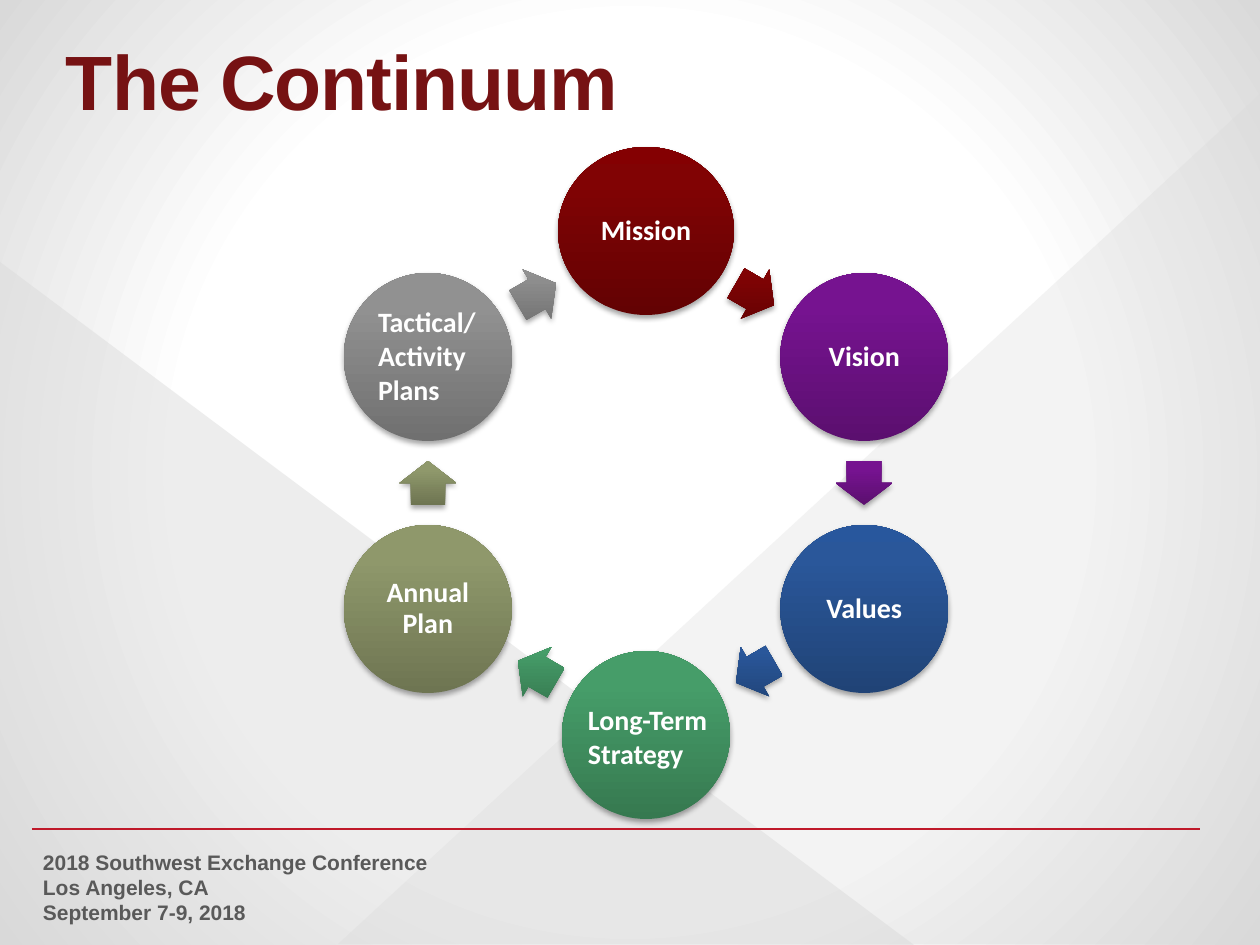
import math
from dataclasses import dataclass

import pptx
import pptx.dml.color
import pptx.enum.shapes
import pptx.enum.text
import pptx.oxml
import pptx.oxml.ns
import pptx.util
from lxml import etree

SHAPE = pptx.enum.shapes.MSO_SHAPE
ALIGN = pptx.enum.text.PP_ALIGN
ANCHOR = pptx.enum.text.MSO_ANCHOR
qn = pptx.oxml.ns.qn


@dataclass(frozen=True)
class Theme:
    heading_font: str = "Arial"
    label_font: str = "Calibri"
    title_size: int = 44
    label_size: int = 16
    footer_size: int = 12
    title: str = "761213"
    footer: str = "595959"
    rule: str = "BF192A"
    facet: str = "D9D9D9"
    label: str = "FFFFFF"
    background: tuple = ((0, "FFFFFF"), (57, "FFFFFF"), (100, "D9D9D9"))
    # Dark, middle and light tone of each stage
    mission: tuple = ("630203", "810304", "840002")
    vision: tuple = ("5B0F6F", "761390", "781193")
    values: tuple = ("204376", "2A579A", "28579D")
    strategy: tuple = ("367950", "469D69", "459F69")
    annual: tuple = ("6E7552", "8F986B", "909A6B")
    tactical: tuple = ("707070", "919191", "929292")


def px(length):
    return pptx.util.Emu(round(length * 914400 / 126))


def rgb(value):
    return pptx.dml.color.RGBColor.from_string(value)


def write_text(frame, text, *, font, size, color, align=ALIGN.LEFT, anchor=ANCHOR.TOP,
               line_spacing=1.0, tracking=None, insets=(0, 0, 0, 0)):
    """Fill a text frame with one bold paragraph per line of text."""
    frame.word_wrap = True
    frame.auto_size = pptx.enum.text.MSO_AUTO_SIZE.NONE
    frame.vertical_anchor = anchor
    (frame.margin_left, frame.margin_top,
     frame.margin_right, frame.margin_bottom) = map(px, insets)
    for index, line in enumerate(text.split("\n")):
        paragraph = frame.paragraphs[0] if index == 0 else frame.add_paragraph()
        paragraph.alignment = align
        paragraph.line_spacing = line_spacing
        run = paragraph.add_run()
        run.text = line
        run.font.name = font
        run.font.size = pptx.util.Pt(size)
        run.font.bold = True
        run.font.color.rgb = rgb(color)
        if tracking is not None:
            run.font._element.set("spc", str(round(tracking * 100)))


def apply_gradient(element, stops, direction):
    """Replace the first solid fill in an element by a gradient."""
    solid = next(element.iter(qn("a:solidFill")))
    stop_xml = "".join(
        f'<a:gs pos="{position * 1000}"><a:srgbClr val="{color}"/></a:gs>'
        for position, color in stops)
    gradient = pptx.oxml.parse_xml(
        f'<a:gradFill {pptx.oxml.ns.nsdecls("a")} rotWithShape="0">'
        f"<a:gsLst>{stop_xml}</a:gsLst>{direction}</a:gradFill>")
    solid.getparent().replace(solid, gradient)


class SlideBuilder:
    def __init__(self, presentation, theme):
        self.theme = theme
        self.slide = presentation.slides.add_slide(presentation.slide_layouts[5])

    def background(self):
        self.slide.background.fill.solid()
        apply_gradient(
            self.slide.element, self.theme.background,
            '<a:path path="circle"><a:fillToRect l="50000" t="50000" '
            'r="50000" b="50000"/></a:path>')

    def title(self, text, left, top, width, height):
        title = self.slide.shapes.title
        title.left, title.top, title.width, title.height = map(
            px, (left, top, width, height))
        write_text(title.text_frame, text, font=self.theme.heading_font,
                   size=self.theme.title_size, color=self.theme.title,
                   line_spacing=0.75, tracking=-0.6, insets=(13, 13, 13, 6))

    def text(self, text, left, top, width, height, **style):
        box = self.slide.shapes.add_textbox(*map(px, (left, top, width, height)))
        write_text(box.text_frame, text, **style)

    def shape(self, kind, left, top, width, height, color, rotation=0):
        shape = self.slide.shapes.add_shape(kind, *map(px, (left, top, width, height)))
        shape.rotation = rotation
        shape.shadow.inherit = False
        shape.fill.solid()
        shape.fill.fore_color.rgb = rgb(color)
        shape.line.fill.background()
        return shape

    def facet(self, left, top, width, height, opacity, rotation=0):
        shape = self.shape(SHAPE.RIGHT_TRIANGLE, left, top, width, height,
                           self.theme.facet, rotation)
        color = next(shape.element.iter(qn("a:srgbClr")))
        etree.SubElement(color, qn("a:alpha"), val=str(opacity * 1000))

    def glossy(self, kind, center, width, height, tones, rotation=0):
        """Shape around a center, with a vertical gradient and a soft shadow."""
        x, y = center
        shape = self.shape(kind, x - width / 2, y - height / 2, width, height,
                           tones[0], rotation)
        apply_gradient(shape.element, zip((0, 80, 100), tones),
                       '<a:lin ang="16200000" scaled="0"/>')
        effects = next(shape.element.iter(qn("a:effectLst")))
        effects.append(pptx.oxml.parse_xml(
            f'<a:outerShdw {pptx.oxml.ns.nsdecls("a")} blurRad="39370" dist="22860" '
            'dir="5400000" rotWithShape="0"><a:srgbClr val="000000">'
            '<a:alpha val="35000"/></a:srgbClr></a:outerShdw>'))
        return shape

    def arrow(self, center, tones, rotation):
        arrow = self.glossy(SHAPE.RIGHT_ARROW, center, 44, 57, tones, rotation)
        arrow.adjustments[0] = 0.6
        arrow.adjustments[1] = 0.5

    def rule(self, left, right, y):
        line = self.slide.shapes.add_connector(
            pptx.enum.shapes.MSO_CONNECTOR.STRAIGHT, *map(px, (left, y, right, y)))
        line.line.color.rgb = rgb(self.theme.rule)
        line.line.width = pptx.util.Pt(1.25)
        etree.SubElement(line.element.spPr, qn("a:effectLst"))


def ring_point(radius, degrees):
    """Point on the cycle, measured clockwise from the top."""
    angle = math.radians(degrees)
    return 646 + radius * math.sin(angle), 483 - radius * math.cos(angle)


def main():
    theme = Theme()
    presentation = pptx.Presentation()
    presentation.slide_width, presentation.slide_height = px(1260), px(945)
    builder = SlideBuilder(presentation, theme)

    # Backdrop, footer and title
    builder.background()
    builder.facet(374, 58, 850, 922, opacity=31, rotation=270)
    builder.facet(0, 262, 914, 683, opacity=46)
    builder.text("2018 Southwest Exchange Conference\nLos Angeles, CA\nSeptember 7-9, 2018",
                 43, 866, 530, 42, font=theme.heading_font, size=theme.footer_size,
                 color=theme.footer, anchor=ANCHOR.MIDDLE)
    builder.rule(32, 1200, 829)
    builder.title("The Continuum", 53, 42, 1147, 105)

    # Cycle: stages every 60 degrees, each followed by an arrow halfway to the next
    label_style = dict(font=theme.label_font, size=theme.label_size, color=theme.label)
    stages = [
        ("Mission", theme.mission, 176),
        ("Vision", theme.vision, 168),
        ("Values", theme.values, 168),
        (None, theme.strategy, 168),
        ("Annual Plan", theme.annual, 168),
        (None, theme.tactical, 168),
    ]
    for index, (label, tones, width) in enumerate(stages):
        degrees = index * 60
        x, y = center = ring_point(252, degrees)
        builder.glossy(SHAPE.OVAL, center, width, 168, tones)
        if label:
            builder.text(label, x - 59, y - 59, 118, 118, align=ALIGN.CENTER,
                         anchor=ANCHOR.MIDDLE, line_spacing=0.9,
                         insets=(2, 2, 2, 2), **label_style)
        builder.arrow(ring_point(218, degrees + 30), tones, (degrees + 30) % 360)

    # Left-aligned labels of the two remaining stages
    builder.text("Long-Term Strategy", 588, 703, 126, 73, **label_style)
    builder.text("Tactical/Activity Plans", 378, 305, 105, 95, **label_style)

    presentation.save("out.pptx")


if __name__ == "__main__":
    main()
